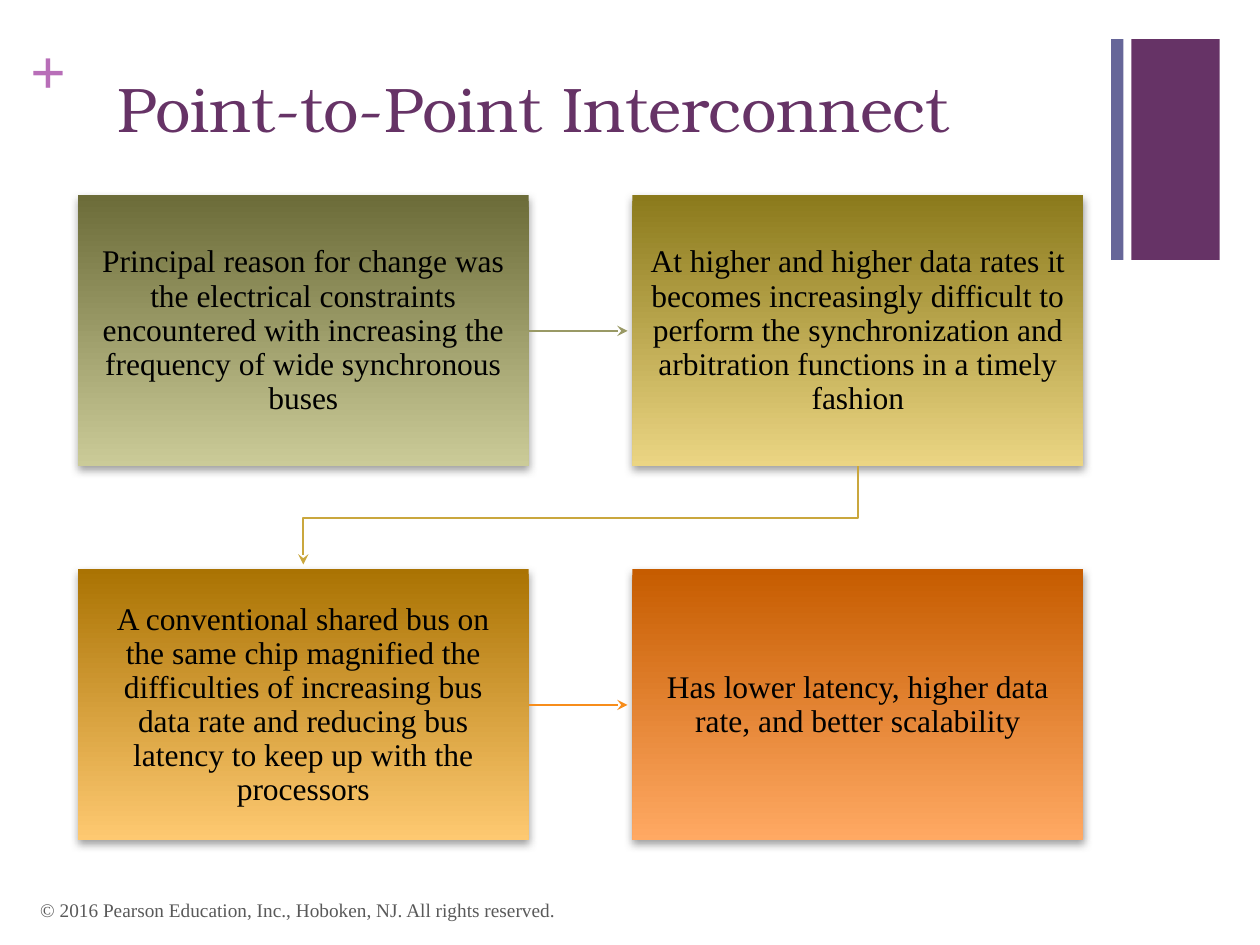
import pptx
import pptx.util
import pptx.dml.color
import pptx.enum.shapes
import pptx.enum.text
from dataclasses import dataclass
from lxml import etree
from pptx.oxml.ns import qn
from pptx.util import Cm


@dataclass(frozen=True)
class Theme:
    heading_font: str = "TeX Gyre Bonum"
    body_font: str = "Times New Roman"
    purple: str = "663366"
    blue: str = "666699"
    plus: str = "B86EB8"
    text: str = "000000"
    footer: str = "595959"
    shadow: str = "808080"
    arrows: tuple = ("999965", "CAA73D", "F78D1B")
    gradients: tuple = (("6C6C39", "CBCB98"), ("8B7A1C", "EBD583"),
                        ("AA7303", "FEC971"), ("C65C00", "FFA963"))
    title_size: int = 36
    body_size: int = 18
    footer_size: int = 11


theme = Theme()
color = pptx.dml.color.RGBColor.from_string
rectangle = pptx.enum.shapes.MSO_SHAPE.RECTANGLE
middle = pptx.enum.text.MSO_ANCHOR.MIDDLE


def write_text(shape, text, font_name, size, font_color, margins, anchor, bold=False):
    frame = shape.text_frame
    frame.text = text
    frame.word_wrap = True
    frame.vertical_anchor = anchor
    frame.margin_left = frame.margin_right = Cm(margins[0])
    frame.margin_top = frame.margin_bottom = Cm(margins[1])
    font = frame.paragraphs[0].runs[0].font
    font.name, font.size, font.bold = font_name, pptx.util.Pt(size), bold
    font.color.rgb = color(font_color)
    return frame.paragraphs[0]


def style_arrow(arrow, line_color):
    arrow.line.color.rgb = color(line_color)
    arrow.line.width = pptx.util.Pt(1)
    properties = arrow._element.spPr
    etree.SubElement(properties.find(qn("a:ln")), qn("a:tailEnd"), type="stealth")
    if properties.find(qn("a:effectLst")) is None:
        etree.SubElement(properties, qn("a:effectLst"))


presentation = pptx.Presentation()
presentation.slide_width, presentation.slide_height = Cm(25.4), Cm(19.05)
slide = presentation.slides.add_slide(presentation.slide_layouts[6])
shapes = slide.shapes

# Corner bars
for left, width, fill in ((22.81, 1.78, theme.purple), (22.4, 0.25, theme.blue)):
    bar = shapes.add_shape(rectangle, Cm(left), Cm(0.79), Cm(width), Cm(4.45))
    bar.shadow.inherit = False
    bar.fill.solid()
    bar.fill.fore_color.rgb = color(fill)
    bar.line.fill.background()

# Plus sign, title and footer
top = pptx.enum.text.MSO_ANCHOR.TOP
plus = shapes.add_textbox(Cm(0.61), Cm(0.64), Cm(0.74), Cm(1.55))
write_text(plus, "+", theme.body_font, theme.title_size, theme.plus, (0, 0), top, True)
plus.text_frame.word_wrap = False
title = shapes.add_textbox(Cm(2.11), Cm(1.27), Cm(20.98), Cm(3.1))
write_text(title, "Point-to-Point Interconnect", theme.heading_font,
           theme.title_size, theme.purple, (0.25, 0.13), top)
footer = shapes.add_textbox(Cm(0.56), Cm(17.83), Cm(17.02), Cm(1.02))
write_text(footer, "© 2016 Pearson Education, Inc., Hoboken, NJ. All rights reserved.",
           theme.body_font, theme.footer_size, theme.footer, (0.25, 0.13), middle)

# Step boxes in a two by two grid
steps = (
    "Principal reason for change was the electrical constraints encountered "
    "with increasing the frequency of wide synchronous buses",
    "At higher and higher data rates it becomes increasingly difficult to perform "
    "the synchronization and arbitration functions in a timely fashion",
    "A conventional shared bus on the same chip magnified the difficulties of "
    "increasing bus data rate and reducing bus latency to keep up with the processors",
    "Has lower latency, higher data rate, and better scalability",
)
grid_left, grid_top = Cm(1.57), Cm(3.94)
box_width, box_height = Cm(9.09), Cm(5.46)
column_step, row_step = Cm(11.18), Cm(7.54)
boxes = []
for index, (step, gradient) in enumerate(zip(steps, theme.gradients)):
    row, column = divmod(index, 2)
    box = shapes.add_shape(rectangle, grid_left + column * column_step,
                           grid_top + row * row_step, box_width, box_height)
    box.fill.gradient()
    box.fill.gradient_angle = 270
    for position, (stop, stop_color) in enumerate(zip(box.fill.gradient_stops, gradient)):
        stop.position = position
        stop.color.rgb = color(stop_color)
    box.line.fill.background()
    box.shadow.inherit = False
    effects = box._element.spPr.find(qn("a:effectLst"))
    shadow = etree.SubElement(effects, qn("a:outerShdw"), blurRad="63500", dist="25400",
                              dir="5400000", rotWithShape="0")
    shade = etree.SubElement(shadow, qn("a:srgbClr"), val=theme.shadow)
    etree.SubElement(shade, qn("a:alpha"), val="75000")
    paragraph = write_text(box, step, theme.body_font, theme.body_size, theme.text,
                           (0.36, 0.36), middle)
    paragraph.alignment = pptx.enum.text.PP_ALIGN.CENTER
    paragraph.line_spacing = 0.9
    boxes.append(box)

# Arrows along each row, stopping just short of the next box
arrow_gap = Cm(0.1)
for start, end, line_color in ((boxes[0], boxes[1], theme.arrows[0]),
                               (boxes[2], boxes[3], theme.arrows[2])):
    center = start.top + box_height // 2
    arrow = shapes.add_connector(pptx.enum.shapes.MSO_CONNECTOR.STRAIGHT,
                                 start.left + box_width, center,
                                 end.left - arrow_gap, center)
    arrow.begin_connect(start, 3)
    style_arrow(arrow, line_color)

# Bent arrow from the first row down to the second
start_x, end_x = (box.left + box_width // 2 for box in (boxes[1], boxes[2]))
start_y, end_y = boxes[1].top + box_height, boxes[2].top - arrow_gap
bend_y = (start_y + boxes[2].top) // 2
builder = shapes.build_freeform(start_x, start_y)
builder.add_line_segments([(start_x, bend_y), (end_x, bend_y), (end_x, end_y)], close=False)
bent_arrow = builder.convert_to_shape()
bent_arrow.fill.background()
style_arrow(bent_arrow, theme.arrows[1])

presentation.save("out.pptx")
